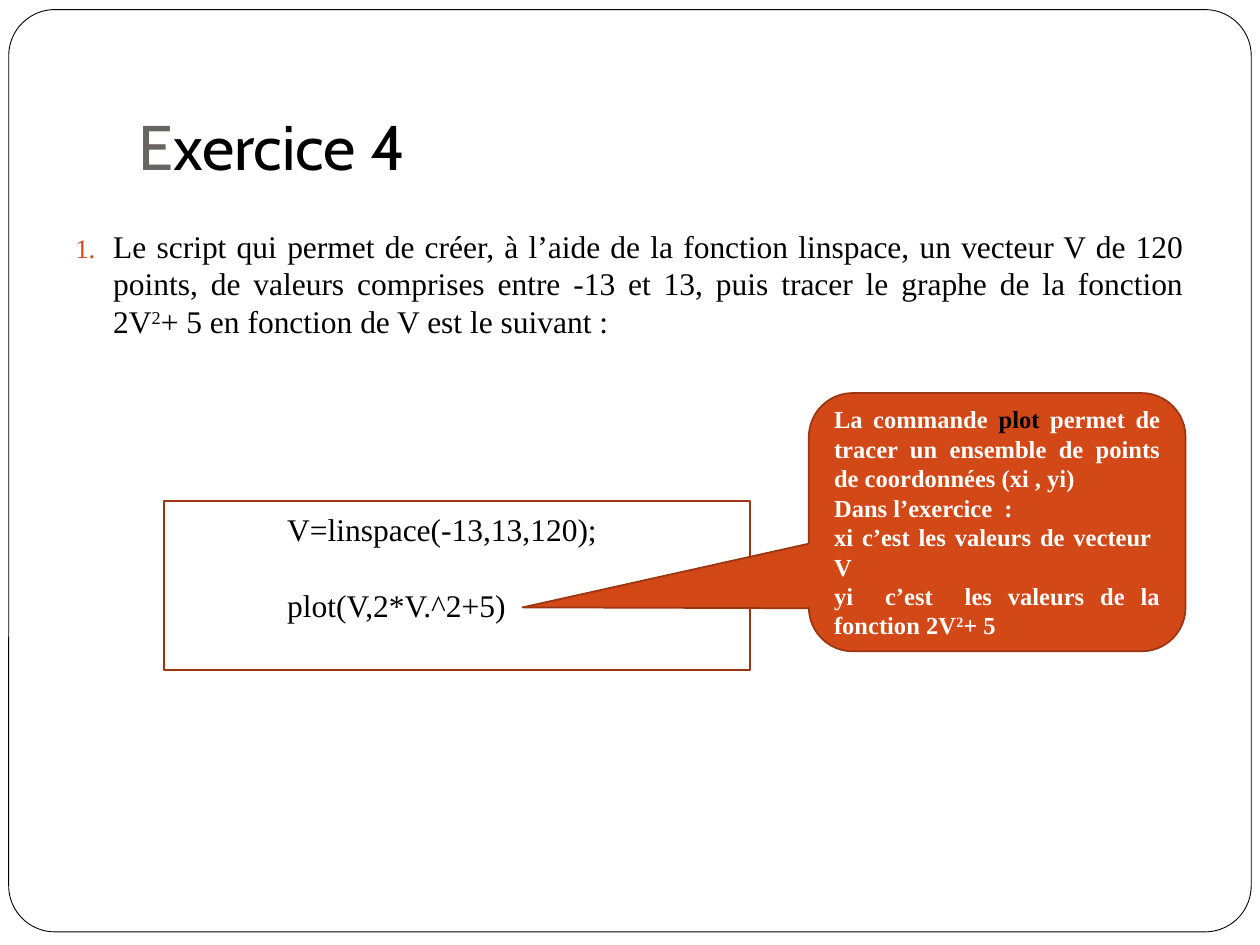
from dataclasses import dataclass

from lxml import etree
from pptx import Presentation
from pptx.dml.color import RGBColor
from pptx.enum.shapes import MSO_SHAPE
from pptx.enum.text import MSO_ANCHOR, PP_ALIGN
from pptx.oxml.ns import qn
from pptx.util import Pt

ROUND = MSO_SHAPE.ROUNDED_RECTANGLE
RECT = MSO_SHAPE.RECTANGLE
BUBBLE = MSO_SHAPE.ROUNDED_RECTANGULAR_CALLOUT
TOP, MIDDLE, BOTTOM = MSO_ANCHOR.TOP, MSO_ANCHOR.MIDDLE, MSO_ANCHOR.BOTTOM
LEFT, JUSTIFY = PP_ALIGN.LEFT, PP_ALIGN.JUSTIFY

HUES = {
    "black": "000000",
    "white": "FFFFFF",
    "grey": "696464",
    "orange": "D34817",
    "rust": "9C3511",
}
SERIF = "Times New Roman"


@dataclass
class Span:
    text: str
    hue: str = "black"
    raised: bool = False


@dataclass
class Para:
    spans: list[Span]
    before: float = 0


@dataclass
class Style:
    size: float
    font: str = SERIF
    bold: bool = False
    align: PP_ALIGN = LEFT


@dataclass
class Box:
    left: float
    top: float
    width: float
    height: float


def color(name: str) -> RGBColor:
    return RGBColor.from_string(HUES[name])


def add_form(slide, kind, box: Box, line: str, weight: float,
             fill: str | None = None, adjust: tuple = ()):
    form = slide.shapes.add_shape(
        kind, Pt(box.left), Pt(box.top), Pt(box.width), Pt(box.height))
    form.shadow.inherit = False
    if fill:
        form.fill.solid()
        form.fill.fore_color.rgb = color(fill)
    else:
        form.fill.background()
    form.line.color.rgb = color(line)
    form.line.width = Pt(weight)
    for i, value in enumerate(adjust):
        form.adjustments[i] = value
    return form


def add_box(slide, box: Box):
    return slide.shapes.add_textbox(
        Pt(box.left), Pt(box.top), Pt(box.width), Pt(box.height))


def write(shape, paras: list[Para], style: Style, anchor: MSO_ANCHOR,
          inset: tuple = (7.2, 3.6, 7.2, 3.6)) -> None:
    """Fill a shape with text; inset is left, top, right, bottom."""
    frame = shape.text_frame
    frame.word_wrap = True
    frame.vertical_anchor = anchor
    (frame.margin_left, frame.margin_top,
     frame.margin_right, frame.margin_bottom) = map(Pt, inset)
    for i, para in enumerate(paras):
        line = frame.add_paragraph() if i else frame.paragraphs[0]
        line.alignment = style.align
        line.space_before = Pt(para.before)
        for span in para.spans:
            run = line.add_run()
            run.text = span.text
            run.font.size = Pt(style.size)
            run.font.name = style.font
            run.font.bold = style.bold
            run.font.color.rgb = color(span.hue)
            if span.raised:
                run.font._element.set("baseline", "30000")


def number(line, indent: float, hue: str) -> None:
    """Give a paragraph a hanging, coloured number."""
    props = line._p.get_or_add_pPr()
    props.set("marL", str(Pt(indent)))
    props.set("indent", str(-Pt(indent)))
    tint = etree.SubElement(props, qn("a:buClr"))
    etree.SubElement(tint, qn("a:srgbClr"), val=HUES[hue])
    etree.SubElement(props, qn("a:buSzPct"), val="85000")
    etree.SubElement(props, qn("a:buFont"), typeface=SERIF)
    etree.SubElement(props, qn("a:buAutoNum"), type="arabicPeriod")


def main() -> None:
    deck = Presentation()
    deck.slide_width, deck.slide_height = Pt(720), Pt(540)
    slide = deck.slides.add_slide(deck.slide_layouts[6])

    add_form(slide, ROUND, Box(5, 5.5, 710, 527), "black", 0.5,
             "white", (0.05,))

    title = add_box(slide, Box(72, 21.6, 612, 90))
    write(title, [Para([Span("E", "grey"), Span("xercice 4")])],
          Style(36, "Cabin"), BOTTOM, (7.2, 3.6, 7.2, 7.2))

    task = add_box(slide, Box(36, 126, 648, 155.5))
    write(task, [Para([
        Span("Le script qui permet de créer, à l’aide de la fonction "
             "linspace, un vecteur V de 120 points, de valeurs comprises "
             "entre -13 et 13, puis tracer le graphe de la fonction 2V"),
        Span("2", raised=True),
        Span("+ 5 en fonction de V est le suivant :"),
    ], 5.8)], Style(18, align=JUSTIFY), TOP)
    number(task.text_frame.paragraphs[0], 21.6, "orange")

    code = add_form(slide, RECT, Box(93.6, 286.5, 334.8, 96.5), "rust", 1)
    write(code, [
        Para([Span("V=linspace(-13,13,120);")]),
        Para([Span("plot(V,2*V.^2+5)")], 22),
    ], Style(18), TOP, (70.5, 5, 7.2, 3.6))

    note = add_form(slide, BUBBLE, Box(462.2, 224.6, 215.3, 147.6), "rust", 1,
                    "orange", (-1.26, 0.33, 0.17))
    write(note, [
        Para([
            Span("La commande ", "white"),
            Span("plot "),
            Span("permet de tracer un ensemble de points de coordonnées "
                 "(xi , yi)", "white"),
        ]),
        Para([Span("Dans l’exercice  :", "white")]),
        Para([Span("xi c’est les valeurs de vecteur  V", "white")]),
        Para([
            Span("yi  c’est  les valeurs de la fonction 2V", "white"),
            Span("2", "white", True),
            Span("+ 5", "white"),
        ]),
    ], Style(14, bold=True, align=JUSTIFY), MIDDLE)

    deck.save("out.pptx")


if __name__ == "__main__":
    main()
